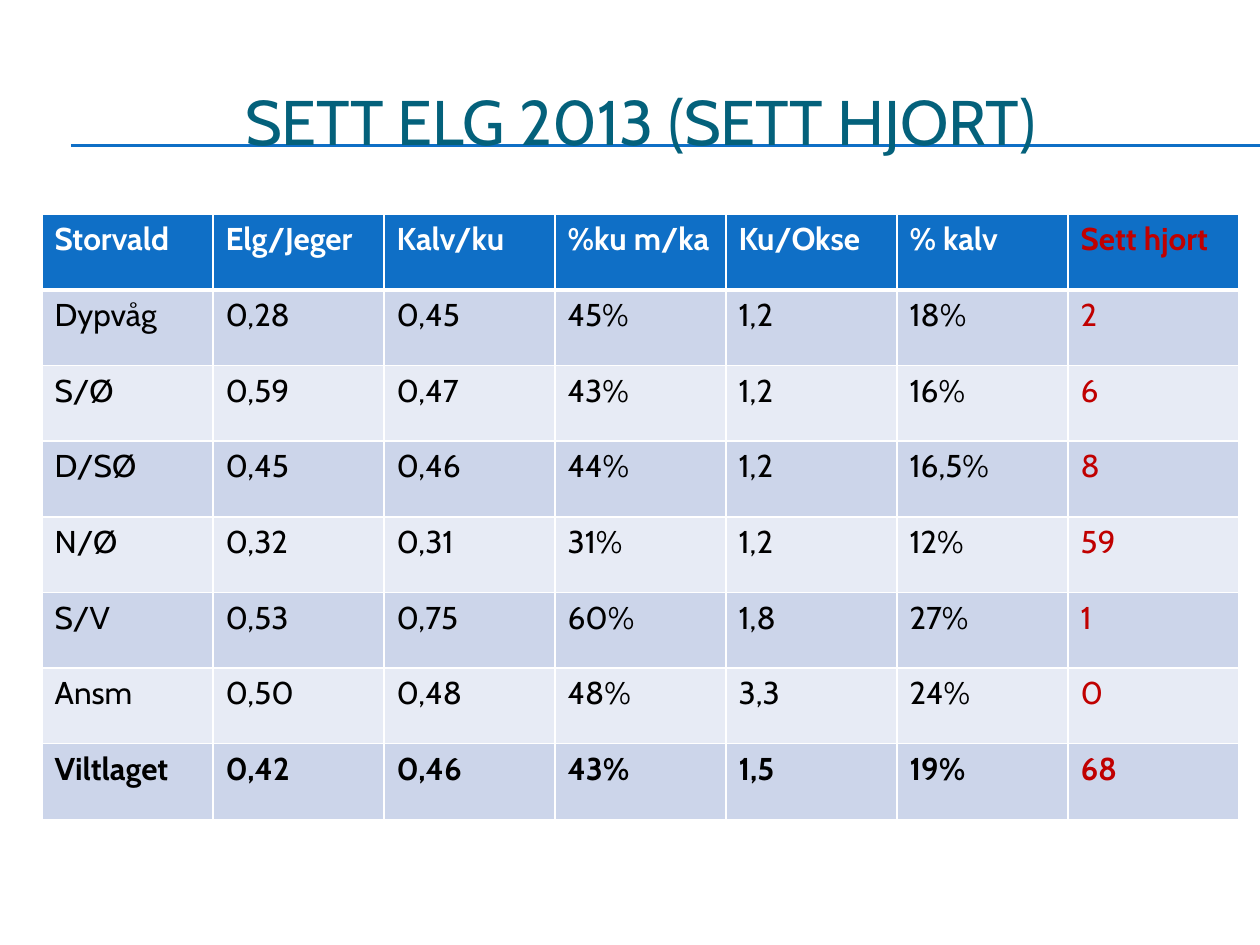
from lxml.etree import SubElement
from pptx import Presentation
from pptx.dml.color import RGBColor
from pptx.enum.shapes import MSO_CONNECTOR as CONN
from pptx.enum.text import MSO_ANCHOR as ANCHOR, PP_ALIGN as ALIGN
from pptx.oxml import parse_xml
from pptx.oxml.ns import nsdecls, qn
from pptx.util import Pt

FONT = "Cabin"
BLUE = RGBColor(0x0F, 0x6F, 0xC6)
TEAL = RGBColor(0x04, 0x61, 0x7B)
RED = RGBColor(0xC0, 0x00, 0x00)
WHITE = RGBColor(0xFF, 0xFF, 0xFF)
BLACK = RGBColor(0x00, 0x00, 0x00)
BAND_DARK = RGBColor(0xCC, 0xD5, 0xEA)
BAND_LIGHT = RGBColor(0xE7, 0xEB, 0xF5)

ROWS = [
    ["Storvald", "Elg/Jeger", "Kalv/ku", "%ku m/ka", "Ku/Okse", "% kalv", "Sett hjort"],
    ["Dypvåg", "0,28", "0,45", "45%", "1,2", "18%", "2"],
    ["S/Ø", "0,59", "0,47", "43%", "1,2", "16%", "6"],
    ["D/SØ", "0,45", "0,46", "44%", "1,2", "16,5%", "8"],
    ["N/Ø", "0,32", "0,31", "31%", "1,2", "12%", "59"],
    ["S/V", "0,53", "0,75", "60%", "1,8", "27%", "1"],
    ["Ansm", "0,50", "0,48", "48%", "3,3", "24%", "0"],
    ["Viltlaget", "0,42", "0,46", "43%", "1,5", "19%", "68"],
]


def add_run(p, text, size, color, bold=False):
    r = p.add_run()
    r.text = text
    r.font.name = FONT
    r.font.size = Pt(size)
    r.font.bold = bold
    r.font.color.rgb = color


def set_borders(cell, top, bottom):
    """Give a cell white borders, 1 pt at the sides."""
    tcPr = cell._tc.get_or_add_tcPr()
    widths = {"lnL": 1, "lnR": 1, "lnT": top, "lnB": bottom}
    for i, (tag, width) in enumerate(widths.items()):
        tcPr.insert(i, parse_xml(
            f'<a:{tag} {nsdecls("a")} w="{Pt(width)}"><a:solidFill>'
            f'<a:srgbClr val="{WHITE}"/></a:solidFill></a:{tag}>'))


def add_rules(slide, x, y, w, gap):
    """Draw the double rule that runs to the slide's right edge."""
    for line_y in (y, y + gap):
        line = slide.shapes.add_connector(
            CONN.STRAIGHT, Pt(x), Pt(line_y), Pt(x + w), Pt(line_y))
        line.line.color.rgb = BLUE
        line.line.width = Pt(0.75)
        SubElement(line._element.spPr, qn("a:effectLst"))


def add_title(slide, x, y, w, h):
    sp = slide.shapes.title
    sp.left, sp.top, sp.width, sp.height = Pt(x), Pt(y), Pt(w), Pt(h)
    tf = sp.text_frame
    tf.vertical_anchor = ANCHOR.MIDDLE
    p = tf.paragraphs[0]
    p.alignment = ALIGN.CENTER
    add_run(p, "SETT ELG 2013 (SETT HJORT)", 36, TEAL)
    # Bring the title in front of the rules
    slide.shapes._spTree.append(sp._element)


def add_sightings_table(slide, x, y, w, h):
    n_rows, n_cols = len(ROWS), len(ROWS[0])
    table = slide.shapes.add_table(
        n_rows, n_cols, Pt(x), Pt(y), Pt(w), Pt(h)).table
    for col in table.columns:
        col.width = Pt(w / n_cols)
    for row in table.rows:
        row.height = Pt(h / n_rows)

    for i, texts in enumerate(ROWS):
        header = i == 0
        fill = BLUE if header else BAND_DARK if i % 2 else BAND_LIGHT
        bold = header or i == n_rows - 1
        for j, text in enumerate(texts):
            cell = table.cell(i, j)
            cell.fill.solid()
            cell.fill.fore_color.rgb = fill
            set_borders(cell, top=3 if i == 1 else 1, bottom=3 if header else 1)
            # The last column, deer seen, is red
            color = RED if j == n_cols - 1 else WHITE if header else BLACK
            add_run(cell.text_frame.paragraphs[0], text, 18, color, bold)


def main():
    prs = Presentation()
    prs.slide_width, prs.slide_height = Pt(720), Pt(540)
    slide = prs.slides.add_slide(prs.slide_layouts[5])
    add_rules(slide, 40.5, 82.6, 679.5, 0.8)
    add_title(slide, 24, 36, 684, 66)
    add_sightings_table(slide, 24, 122.4, 684, 346)
    prs.save("out.pptx")


if __name__ == "__main__":
    main()
